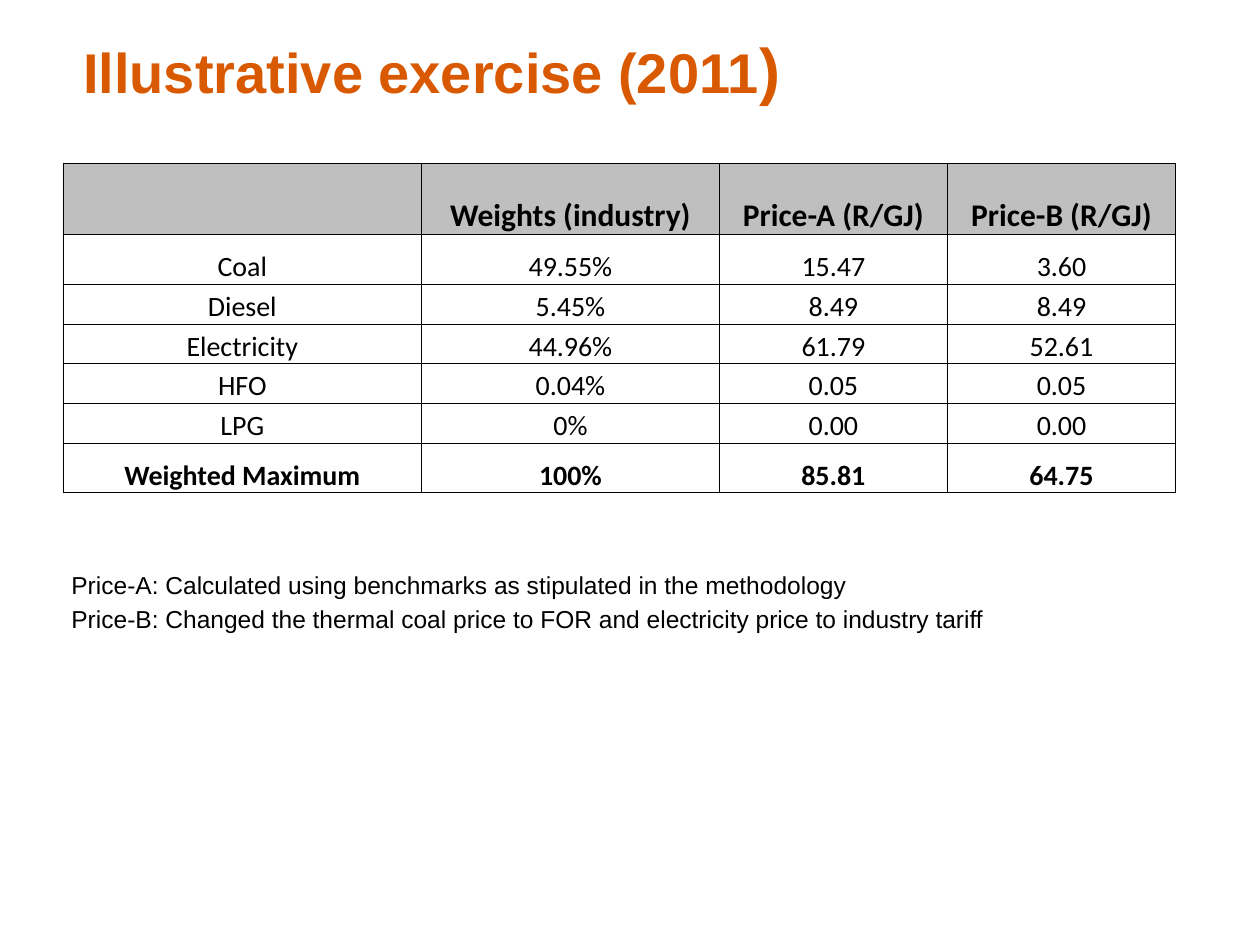
from lxml.etree import SubElement
from pptx import Presentation
from pptx.dml.color import RGBColor
from pptx.enum.text import MSO_ANCHOR, PP_ALIGN
from pptx.oxml.ns import qn
from pptx.util import Cm, Pt

ORANGE = RGBColor(0xD9, 0x59, 0x00)
BLACK = RGBColor(0x00, 0x00, 0x00)
GREY = RGBColor(0xBF, 0xBF, 0xBF)


def add_run(paragraph, text, font_name, size, color, bold=False):
    run = paragraph.add_run()
    run.text = text
    run.font.name = font_name
    run.font.size = Pt(size)
    run.font.bold = bold
    run.font.color.rgb = color


def add_borders(cell):
    """Draw a thin black line on all four sides; call before setting the fill."""
    properties = cell._tc.get_or_add_tcPr()
    for side in ("a:lnL", "a:lnR", "a:lnT", "a:lnB"):
        line = SubElement(properties, qn(side), w=str(Pt(0.5)))
        fill = SubElement(line, qn("a:solidFill"))
        SubElement(fill, qn("a:srgbClr"), val=str(BLACK))


prs = Presentation()
prs.slide_width = Cm(25.4)
prs.slide_height = Cm(19.05)
slide = prs.slides.add_slide(prs.slide_layouts[6])

# Title
title = slide.shapes.add_textbox(Cm(1.27), Cm(0.64), Cm(22.86), Cm(1.47)).text_frame
title.word_wrap = True
title.vertical_anchor = MSO_ANCHOR.MIDDLE
title.margin_left = Cm(0.41)
heading = title.paragraphs[0]
add_run(heading, "Illustrative exercise (2011", "Arial", 32, ORANGE, bold=True)
add_run(heading, ")", "Arial", 36, ORANGE, bold=True)

# Price table
price_rows = [
    ("", "Weights (industry)", "Price-A (R/GJ)", "Price-B (R/GJ)"),
    ("Coal", "49.55%", "15.47", "3.60"),
    ("Diesel", "5.45%", "8.49", "8.49"),
    ("Electricity", "44.96%", "61.79", "52.61"),
    ("HFO", "0.04%", "0.05", "0.05"),
    ("LPG", "0%", "0.00", "0.00"),
    ("Weighted Maximum", "100%", "85.81", "64.75"),
]
column_widths = [7.23, 6, 4.6, 4.6]
row_heights = [1.43, 1, 0.8, 0.8, 0.8, 0.8, 1]

prices = slide.shapes.add_table(
    len(price_rows), len(column_widths), Cm(1.27), Cm(3.3),
    Cm(sum(column_widths)), Cm(sum(row_heights)),
).table
prices.first_row = False
prices.horz_banding = False
for column, width in zip(prices.columns, column_widths):
    column.width = Cm(width)

last_row = len(price_rows) - 1
for r, (values, height) in enumerate(zip(price_rows, row_heights)):
    prices.rows[r].height = Cm(height)
    for c, value in enumerate(values):
        cell = prices.cell(r, c)
        cell.margin_left = cell.margin_right = 0
        cell.margin_top = cell.margin_bottom = 0
        cell.vertical_anchor = MSO_ANCHOR.BOTTOM
        add_borders(cell)
        if r == 0:
            cell.fill.solid()
            cell.fill.fore_color.rgb = GREY
        else:
            cell.fill.background()
        if value:
            paragraph = cell.text_frame.paragraphs[0]
            paragraph.alignment = PP_ALIGN.CENTER
            add_run(paragraph, value, "Calibri", 18 if r == 0 else 16, BLACK,
                    bold=r in (0, last_row))

# Price definitions
definitions = [
    "Price-A: Calculated using benchmarks as stipulated in the methodology",
    "Price-B: Changed the thermal coal price to FOR and electricity price to industry tariff",
]
notes = slide.shapes.add_textbox(Cm(1.19), Cm(11.36), Cm(20.19), Cm(6.4)).text_frame
notes.word_wrap = True
for i, definition in enumerate(definitions):
    paragraph = notes.add_paragraph() if i else notes.paragraphs[0]
    indent = paragraph._p.get_or_add_pPr()
    indent.set("marL", str(Cm(0.95)))
    indent.set("indent", str(-Cm(0.95)))
    if i:
        paragraph.space_before = Pt(3)
    add_run(paragraph, definition, "Arial", 14, BLACK)

prs.save("out.pptx")
